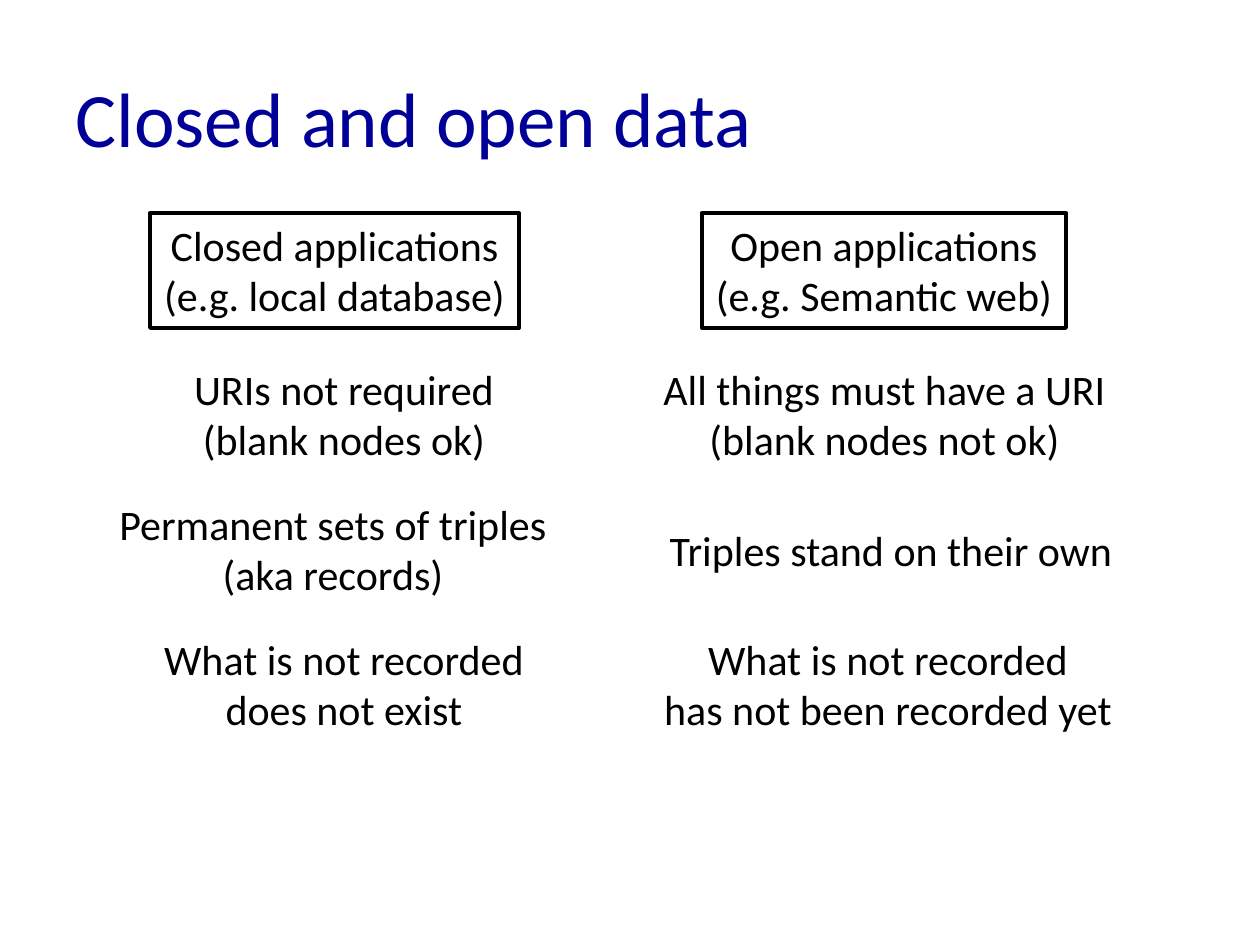
from pptx import Presentation
from pptx.dml.color import RGBColor
from pptx.enum.shapes import MSO_SHAPE
from pptx.enum.text import MSO_ANCHOR, MSO_AUTO_SIZE, PP_ALIGN
from pptx.util import Emu, Pt

RECTANGLE = MSO_SHAPE.RECTANGLE
MIDDLE, TOP = MSO_ANCHOR.MIDDLE, MSO_ANCHOR.TOP
LEFT, CENTER = PP_ALIGN.LEFT, PP_ALIGN.CENTER
GROW = MSO_AUTO_SIZE.SHAPE_TO_FIT_TEXT
NO_FIT = MSO_AUTO_SIZE.NONE

THEME = {
    "font": "Calibri",
    "title_color": RGBColor(0x00, 0x00, 0x99),
    "text_color": RGBColor(0x00, 0x00, 0x00),
    "title_size": Pt(44),
    "text_size": Pt(24),
    "frame_width": Pt(2.25),
}

TITLE = "Closed and open data"
HEADINGS = [
    (150, 369, "Closed applications\n(e.g. local database)"),
    (702, 364, "Open applications\n(e.g. Semantic web)"),
]
COMPARISONS = [
    [
        (180, 328, "URIs not required\n(blank nodes ok)"),
        (649, 471, "All things must have a URI\n(blank nodes not ok)"),
    ],
    [
        (105, 456, "Permanent sets of triples\n(aka records)"),
        (655, 472, "Triples stand on their own"),
    ],
    [
        (150, 388, "What is not recorded\ndoes not exist"),
        (649, 478, "What is not recorded\nhas not been recorded yet"),
    ],
]

HEADING_TOP = 213
FIRST_ROW_TOP = 357
ROW_PITCH = 135
ROW_HEIGHT = 115
SINGLE_HEIGHT = 63


def px(length):
    return Emu(round(length * 914400 / 126))


def write(box, text, size, color, align, anchor):
    frame = box.text_frame
    frame.text = text
    frame.vertical_anchor = anchor
    for paragraph in frame.paragraphs:
        paragraph.alignment = align
        for span in paragraph.runs:
            span.font.name = THEME["font"]
            span.font.size = size
            span.font.color.rgb = color


def write_statement(box, text):
    write(box, text, THEME["text_size"], THEME["text_color"], CENTER, TOP)
    box.text_frame.word_wrap = False
    box.text_frame.auto_size = GROW


def add_heading(page, left, width, text):
    box = page.shapes.add_shape(
        RECTANGLE, px(left), px(HEADING_TOP), px(width), px(ROW_HEIGHT))
    box.shadow.inherit = False
    box.fill.background()
    box.line.color.rgb = THEME["text_color"]
    box.line.width = THEME["frame_width"]
    write_statement(box, text)


def add_statement(page, row, left, width, text):
    height = ROW_HEIGHT if "\n" in text else SINGLE_HEIGHT
    top = FIRST_ROW_TOP + row * ROW_PITCH + (ROW_HEIGHT - height) / 2
    box = page.shapes.add_textbox(px(left), px(top), px(width), px(height))
    write_statement(box, text)


def main():
    deck = Presentation()
    deck.slide_width, deck.slide_height = px(1260), px(945)
    page = deck.slides.add_slide(deck.slide_layouts[5])

    title = page.shapes.title
    title.left, title.top, title.width, title.height = map(px, (63, 38, 1134, 157))
    write(title, TITLE, THEME["title_size"], THEME["title_color"], LEFT, MIDDLE)
    title.text_frame.auto_size = NO_FIT

    for heading in HEADINGS:
        add_heading(page, *heading)
    for row, statements in enumerate(COMPARISONS):
        for statement in statements:
            add_statement(page, row, *statement)

    deck.save("out.pptx")


if __name__ == "__main__":
    main()
